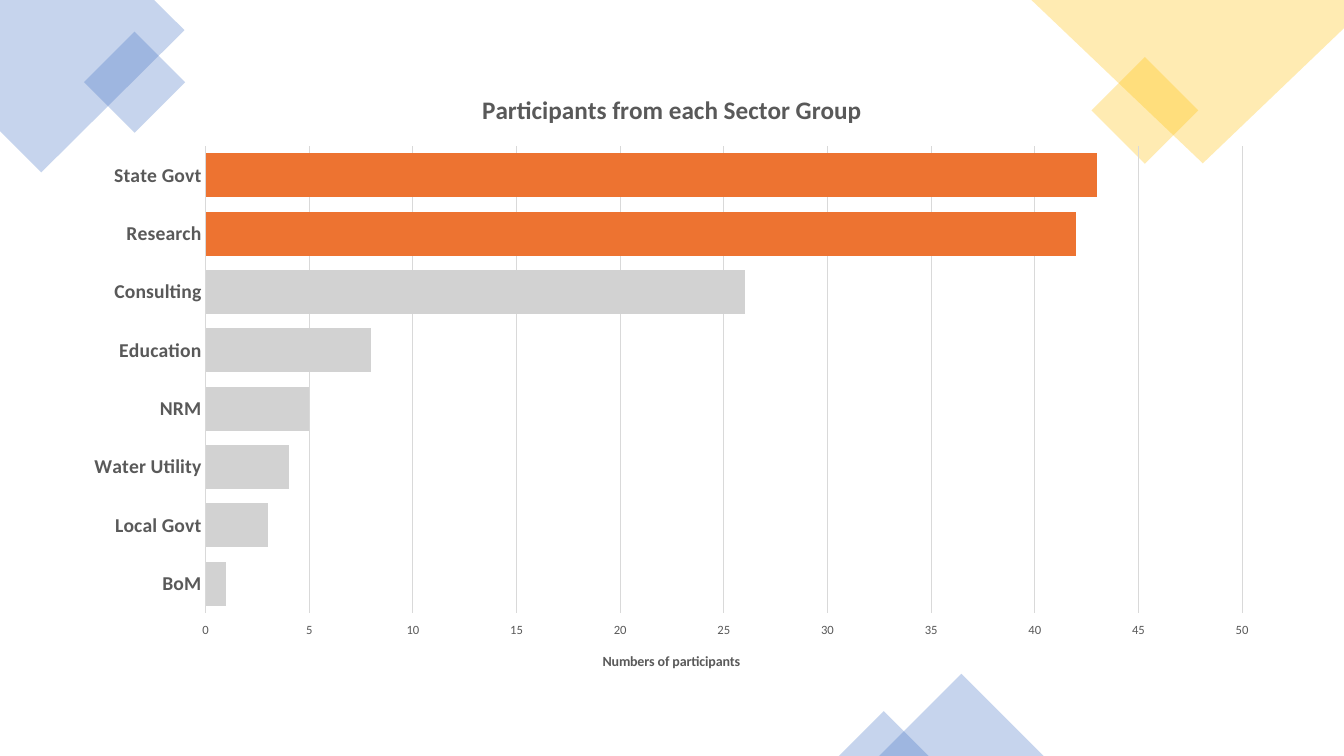
import pptx
import pptx.chart.data
import pptx.dml.color
import pptx.enum.chart
import pptx.enum.shapes
import pptx.oxml
import pptx.oxml.ns
import pptx.util

WIDTH, HEIGHT = 13.33, 7.5
COLORS = {"blue": "4472C4", "gold": "FFC000", "orange": "ED7331",
          "gray": "D2D2D2", "grid": "D9D9D9", "text": "595959"}
SECTORS = {"State Govt": 43, "Research": 42, "Consulting": 26, "Education": 8,
           "NRM": 5, "Water Utility": 4, "Local Govt": 3, "BoM": 1}
HIGHLIGHTED = 2
CHART_TITLE = "Participants from each Sector Group"
AXIS_TITLE = "Numbers of participants"
CHART_BOX = (0.7, 0.7, 11.93, 6.09)
PLOT_BOX = (2.04, 1.45, 10.28, 4.63)
CORNERS = [
    ("blue", [(0, 0), (1.53, 0), (1.83, 0.3), (0.41, 1.71), (0, 1.3)]),
    ("gold", [(10.23, 0), (WIDTH, 0), (WIDTH, 0.28), (11.93, 1.62)]),
]
SQUARES = [("blue", 0.98, 0.46, 0.71), ("gold", 10.98, 0.72, 0.75)]
PEAKS = [("blue", 8.72, 1.63), ("blue", 8.32, 0.89)]
SHAPES = pptx.enum.shapes.MSO_SHAPE
CHART = pptx.enum.chart
qn = pptx.oxml.ns.qn


def rgb(name):
    return pptx.dml.color.RGBColor.from_string(COLORS[name])


def inches(*lengths):
    return [pptx.util.Inches(v) for v in lengths]


def tint(sp, color):
    sp.shadow.inherit = False
    sp.line.fill.background()
    sp.fill.solid()
    sp.fill.fore_color.rgb = rgb(color)
    hue = sp.fill._xPr.find(".//" + qn("a:srgbClr"))
    hue.append(pptx.oxml.parse_xml(
        f'<a:alpha {pptx.oxml.ns.nsdecls("a")} val="30000"/>'))


def style(font, size, bold, color="text"):
    values = {"name": "Calibri", "size": pptx.util.Pt(size), "bold": bold}
    for key, value in values.items():
        setattr(font, key, value)
    font.color.rgb = rgb(color)


def caption(holder, text, size):
    tf = holder.text_frame
    tf.text = text
    style(tf.paragraphs[0].runs[0].font, size, True)


def hairline(line):
    line.color.rgb = rgb("grid")
    line.width = pptx.util.Pt(0.75)


def add_decor(s):
    for color, points in CORNERS:
        first, *rest = [inches(*point) for point in points]
        builder = s.shapes.build_freeform(*first)
        builder.add_line_segments(rest, close=True)
        tint(builder.convert_to_shape(), color)
    for color, left, top, side in SQUARES:
        sp = s.shapes.add_shape(SHAPES.RECTANGLE, *inches(left, top, side, side))
        sp.rotation = 315
        tint(sp, color)
    for color, left, base in PEAKS:
        box = inches(left, HEIGHT - base / 2, base, base / 2)
        tint(s.shapes.add_shape(SHAPES.ISOSCELES_TRIANGLE, *box), color)


def place_plot(chart):
    left, top, width, height = CHART_BOX
    x, y, w, h = PLOT_BOX
    shares = {"x": (x - left) / width, "y": (y - top) / height,
              "w": w / width, "h": h / height}
    modes = '<c:xMode val="edge"/><c:yMode val="edge"/>'
    parts = "".join(f'<c:{k} val="{v:.4f}"/>' for k, v in shares.items())
    area = chart._chartSpace.find(".//" + qn("c:plotArea"))
    for old in area.findall(qn("c:layout")):
        area.remove(old)
    area.insert(0, pptx.oxml.parse_xml(
        f'<c:layout {pptx.oxml.ns.nsdecls("c")}><c:manualLayout>'
        f'<c:layoutTarget val="inner"/>{modes}{parts}'
        '</c:manualLayout></c:layout>'))


def add_sector_chart(s):
    data = pptx.chart.data.CategoryChartData()
    data.categories = list(SECTORS)
    data.add_series("Series 1", list(SECTORS.values()))
    chart = s.shapes.add_chart(CHART.XL_CHART_TYPE.BAR_STACKED,
                               *inches(*CHART_BOX), data).chart
    style(chart.font, 10, False)
    chart.has_legend = False
    chart.has_title = True
    chart.chart_title.include_in_layout = False
    caption(chart.chart_title, CHART_TITLE, 18)

    plot = chart.plots[0]
    for key, value in {"gap_width": 33, "overlap": 100,
                       "vary_by_categories": False}.items():
        setattr(plot, key, value)
    bars = plot.series[0]
    bars.format.fill.solid()
    bars.format.fill.fore_color.rgb = rgb("gray")
    for i in range(HIGHLIGHTED):
        fill = bars.points[i].format.fill
        fill.solid()
        fill.fore_color.rgb = rgb("orange")

    sectors, counts = chart.category_axis, chart.value_axis
    for axis, size, bold in ((sectors, 14, True), (counts, 9, False)):
        axis.major_tick_mark = axis.minor_tick_mark = CHART.XL_TICK_MARK.NONE
        style(axis.tick_labels.font, size, bold)
    sectors.reverse_order = True
    sectors.has_major_gridlines = False
    hairline(sectors.format.line)
    for key, value in {"minimum_scale": 0, "maximum_scale": 50, "major_unit": 5,
                       "has_major_gridlines": True,
                       "tick_label_position":
                           CHART.XL_TICK_LABEL_POSITION.HIGH}.items():
        setattr(counts, key, value)
    hairline(counts.major_gridlines.format.line)
    counts.format.line.fill.background()
    caption(counts.axis_title, AXIS_TITLE, 10)
    place_plot(chart)


def main():
    prs = pptx.Presentation()
    prs.slide_width, prs.slide_height = inches(WIDTH, HEIGHT)
    s = prs.slides.add_slide(prs.slide_layouts[6])
    add_decor(s)
    add_sector_chart(s)
    prs.save("out.pptx")


if __name__ == "__main__":
    main()
